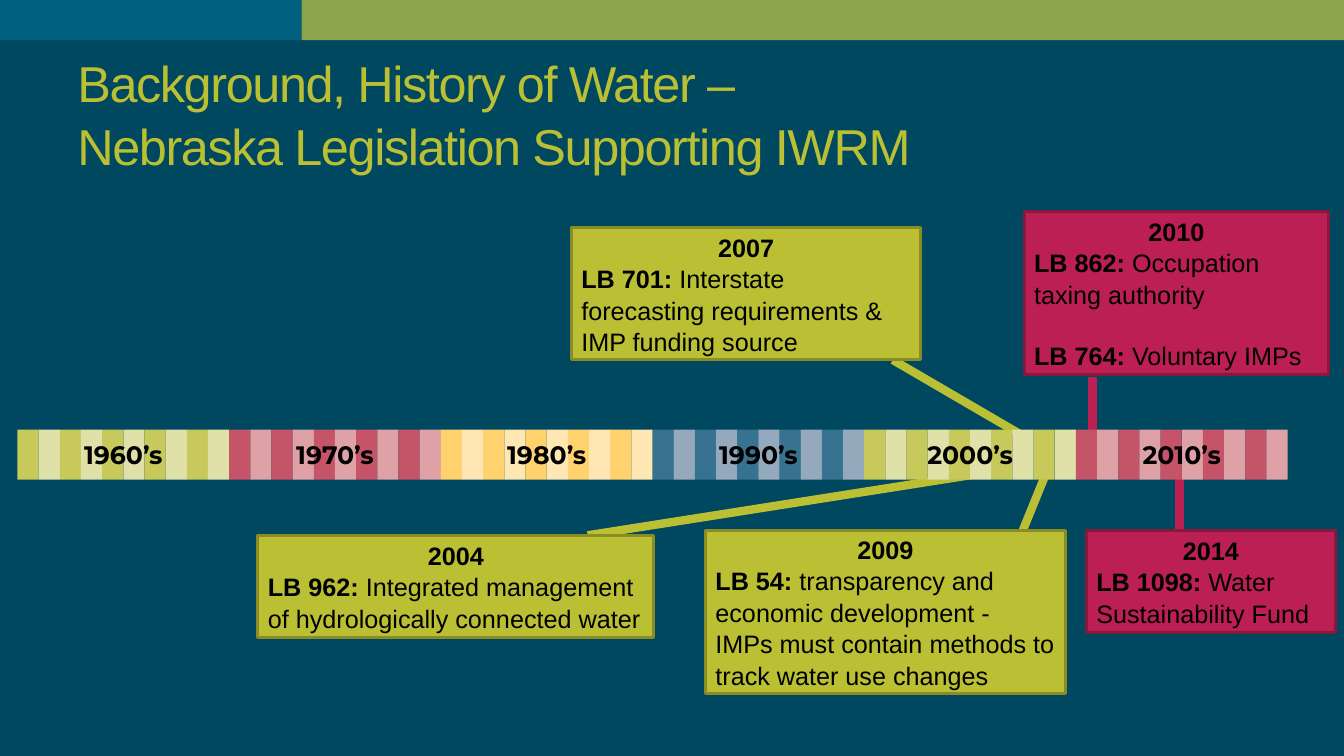
from lxml.etree import SubElement
from pptx import Presentation
from pptx.dml.color import RGBColor
from pptx.enum.shapes import MSO_CONNECTOR as CONN, MSO_SHAPE as SHAPE
from pptx.enum.text import MSO_ANCHOR as ANCHOR, PP_ALIGN as ALIGN
from pptx.oxml.ns import qn
from pptx.util import Cm, Pt

NAVY = RGBColor(0x00, 0x48, 0x5F)
TEAL = RGBColor(0x00, 0x60, 0x7F)
OLIVE = RGBColor(0x8B, 0xA5, 0x4C)
BLACK = RGBColor(0x00, 0x00, 0x00)
LIME = RGBColor(0xBA, 0xBF, 0x33)
LIME_EDGE = RGBColor(0x8A, 0x8D, 0x26)
CRIMSON = RGBColor(0xBB, 0x1F, 0x53)
CRIMSON_EDGE = RGBColor(0x8A, 0x17, 0x3D)

# Stripe colours of a decade, dark then light
GREENS = (RGBColor(0xC7, 0xC9, 0x5A), RGBColor(0xE0, 0xE0, 0xA9))
REDS = (RGBColor(0xC5, 0x54, 0x69), RGBColor(0xDD, 0xA1, 0xA6))
YELLOWS = (RGBColor(0xFF, 0xD2, 0x6E), RGBColor(0xFF, 0xE7, 0xB3))
BLUES = (RGBColor(0x37, 0x73, 0x90), RGBColor(0x94, 0xAA, 0xBC))

SLIDE_W, SLIDE_H = 33.87, 19.05
BAND_X, BAND_Y, BAND_W, BAND_H = 0.44, 10.83, 32.01, 1.26
LINE_SPACING = 1.04

DECADES = [("1960’s", GREENS), ("1970’s", REDS), ("1980’s", YELLOWS),
           ("1990’s", BLUES), ("2000’s", GREENS), ("2010’s", REDS)]

# Start and end of each leader line
LEADERS = [
    (24.54, 11.96, 14.81, 13.49, LIME),
    (26.47, 11.66, 25.55, 13.92, LIME),
    (22.5, 9.07, 25.93, 11.07, LIME),
    (27.53, 9.5, 27.53, 11.25, CRIMSON),
    (29.72, 11.73, 29.72, 13.49, CRIMSON),
]

# Place, colours, year and paragraphs (bill, description, space before)
LIME_BOX = (LIME, LIME_EDGE)
CRIMSON_BOX = (CRIMSON, CRIMSON_EDGE)
CALLOUTS = [
    ((6.5, 13.49, 9.98, 2.57), LIME_BOX, "2004",
     [("LB 962: ", "Integrated management of hydrologically connected water", 0)]),
    ((14.4, 5.74, 8.81, 3.33), LIME_BOX, "2007",
     [("LB 701: ", "Interstate forecasting requirements & IMP funding source", 0)]),
    ((17.78, 13.36, 9.07, 4.11), LIME_BOX, "2009",
     [("LB 54: ", "transparency and economic development -", 0),
      ("", "IMPs must contain methods to track water use changes", 0)]),
    ((25.81, 5.33, 7.67, 4.11), CRIMSON_BOX, "2010",
     [("LB 862: ", "Occupation taxing authority", 0),
      ("LB 764: ", "Voluntary IMPs", 21.6)]),
    ((27.38, 13.36, 6.27, 2.57), CRIMSON_BOX, "2014",
     [("LB 1098: ", "Water Sustainability Fund", 0)]),
]


def add_rect(s, x, y, w, h, fill, edge=None):
    sp = s.shapes.add_shape(SHAPE.RECTANGLE, Cm(x), Cm(y), Cm(w), Cm(h))
    sp.shadow.inherit = False
    sp.fill.solid()
    sp.fill.fore_color.rgb = fill
    if edge is None:
        sp.line.fill.background()
    else:
        sp.line.color.rgb = edge
        sp.line.width = Pt(2.08)
    return sp


def add_textbox(s, x, y, w, h):
    tf = s.shapes.add_textbox(Cm(x), Cm(y), Cm(w), Cm(h)).text_frame
    tf.word_wrap = True
    tf.vertical_anchor = ANCHOR.MIDDLE
    return tf


def style(p, size, color, name="Arial", bold=None, align=ALIGN.LEFT):
    p.alignment = align
    p.font.size, p.font.name, p.font.bold = Pt(size), name, bold
    p.font.color.rgb = color


def add_title(s, text):
    p = add_textbox(s, 1.7, 1.47, 30.48, 2.74).paragraphs[0]
    p.text = text
    p.line_spacing = LINE_SPACING
    style(p, 36, LIME)
    for r in p.runs:
        r._r.get_or_add_rPr().set("spc", "-100")


def add_leader(s, x1, y1, x2, y2, color):
    cx = s.shapes.add_connector(CONN.STRAIGHT, Cm(x1), Cm(y1), Cm(x2), Cm(y2))
    cx.line.color.rgb = color
    cx.line.width = Pt(6)
    SubElement(cx._element.spPr, qn("a:effectLst"))


def add_decade(s, index, label, shades):
    width = BAND_W / len(DECADES)
    left = BAND_X + index * width
    for year in range(10):
        add_rect(s, left + year * width / 10, BAND_Y, width / 10, BAND_H, shades[year % 2])
    p = add_textbox(s, left, BAND_Y, width, BAND_H).paragraphs[0]
    p.text = label
    style(p, 18, BLACK, "Montserrat", True, ALIGN.CENTER)


def add_callout(s, place, colors, year, bills):
    tf = add_rect(s, *place, *colors).text_frame
    tf.word_wrap = True
    tf.vertical_anchor = ANCHOR.MIDDLE
    p = tf.paragraphs[0]
    p.text = year
    p.line_spacing = LINE_SPACING
    style(p, 18, BLACK, bold=True, align=ALIGN.CENTER)
    for bill, description, gap in bills:
        p = tf.add_paragraph()
        p.line_spacing = LINE_SPACING
        p.space_before = Pt(gap)
        if bill:
            r = p.add_run()
            r.text = bill
            r.font.bold = True
        p.add_run().text = description
        style(p, 18, BLACK)


def main():
    prs = Presentation()
    prs.slide_width, prs.slide_height = Cm(SLIDE_W), Cm(SLIDE_H)
    s = prs.slides.add_slide(prs.slide_layouts[6])
    s.background.fill.solid()
    s.background.fill.fore_color.rgb = NAVY

    # Header strip and title
    add_rect(s, 0, 0, 7.6, 1.01, TEAL)
    add_rect(s, 7.6, 0, SLIDE_W - 7.6, 1.01, OLIVE)
    add_title(s, "Background, History of Water –\vNebraska Legislation Supporting IWRM")

    # Leader lines lie behind the timeline and the callouts
    for leader in LEADERS:
        add_leader(s, *leader)

    # Timeline
    for index, (label, shades) in enumerate(DECADES):
        add_decade(s, index, label, shades)

    # Legislation callouts
    for callout in CALLOUTS:
        add_callout(s, *callout)

    prs.save("out.pptx")


if __name__ == "__main__":
    main()
